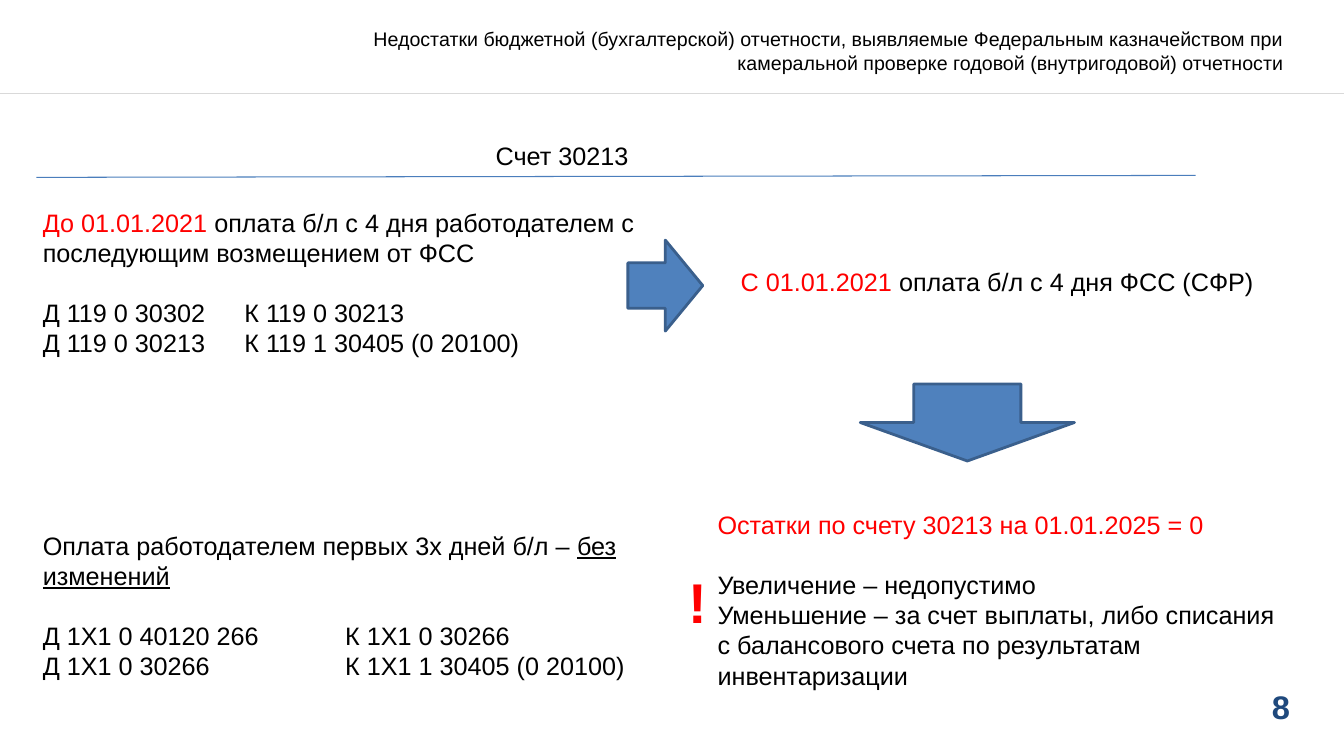
from lxml import etree
from pptx import Presentation, util as u
from pptx.dml.color import RGBColor
from pptx.enum import shapes, text
from pptx.oxml.ns import qn

Pt = u.Pt
FONT = "Arial"
BODY = 18
BLANK_LINE = 21  # gap before a new block of text
COLORS = {
    "text": "000000",
    "accent": "FF0000",
    "number": "1F497D",
    "arrow": "4F81BD",
    "arrow_edge": "3A5F8C",
    "title_rule": "4B7EBC",
    "header_rule": "D9D9D9",
}


def rgb(name):
    return RGBColor.from_string(COLORS[name])


def run(content, color="text", underline=False):
    return content, color, underline


def para(*runs, gap=0, tab=None):
    return runs, gap, tab


def add_text(s, box, paras, size=BODY, bold=False, align=text.PP_ALIGN.LEFT, inset=True):
    sp = s.shapes.add_textbox(*map(Pt, box))
    tf = sp.text_frame
    tf.word_wrap = True
    if not inset:
        tf.margin_left = tf.margin_right = tf.margin_top = tf.margin_bottom = 0
    for i, (runs, gap, tab) in enumerate(paras):
        p = tf.add_paragraph() if i else tf.paragraphs[0]
        p.alignment = align
        if gap:
            p.space_before = Pt(gap)
        if tab:
            tabs = etree.SubElement(p._p.get_or_add_pPr(), qn("a:tabLst"))
            etree.SubElement(tabs, qn("a:tab"), pos=str(Pt(tab)), algn="l")
        for content, color, underline in runs:
            r = p.add_run()
            r.text = content
            r.font.name = FONT
            r.font.size = Pt(size)
            r.font.bold = bold
            r.font.underline = underline
            r.font.color.rgb = rgb(color)


def add_rule(s, start, end, color, width):
    line = s.shapes.add_connector(shapes.MSO_CONNECTOR.STRAIGHT, *map(Pt, start + end))
    line.line.color.rgb = rgb(color)
    line.line.width = Pt(width)
    etree.SubElement(line._element.spPr, qn("a:effectLst"))


def add_arrow(s, kind, box):
    sp = s.shapes.add_shape(kind, *map(Pt, box))
    sp.shadow.inherit = False
    sp.fill.solid()
    sp.fill.fore_color.rgb = rgb("arrow")
    sp.line.color.rgb = rgb("arrow_edge")
    sp.line.width = Pt(2)


def main():
    prs = Presentation()
    prs.slide_width, prs.slide_height = Pt(960), Pt(540)
    s = prs.slides.add_slide(prs.slide_layouts[6])

    # Header, rules and page number
    add_text(s, (700.5, 490.5, 221, 28), [para(run("8", "number"))],
             size=23.3, bold=True, align=text.PP_ALIGN.RIGHT, inset=False)
    add_rule(s, (26, 126.7), (854, 125.3), "title_rule", 0.75)
    add_rule(s, (0, 67), (960, 67), "header_rule", 1)
    add_text(s, (245, 16, 679, 41), [para(run(
        "Недостатки бюджетной (бухгалтерской) отчетности, выявляемые Федеральным "
        "казначейством при камеральной проверке годовой (внутригодовой) отчетности"))],
        size=14, align=text.PP_ALIGN.RIGHT)
    add_text(s, (347, 96.5, 256, 29), [para(run("Счет 30213"))])

    # Before and after the change
    add_text(s, (23.5, 144.5, 438, 117), [
        para(run("До 01.01.2021 ", "accent"),
             run("оплата б/л с 4 дня работодателем с последующим возмещением от ФСС")),
        para(run("Д 119 0 30302\tК 119 0 30213"), gap=BLANK_LINE, tab=144),
        para(run("Д 119 0 30213\tК 119 1 30405 (0 20100)"), tab=144),
    ])
    add_text(s, (522, 186.5, 438, 51), [
        para(run("С 01.01.2021 ", "accent"), run("оплата б/л с 4 дня ФСС (СФР)")),
    ])
    add_arrow(s, shapes.MSO_SHAPE.RIGHT_ARROW, (448.5, 171.5, 53.5, 65))
    add_arrow(s, shapes.MSO_SHAPE.DOWN_ARROW, (614.5, 274.3, 153, 55))

    # Account balance
    add_text(s, (505.5, 360.5, 418, 138), [
        para(run("Остатки по счету 30213 на 01.01.2025 = 0", "accent")),
        para(run("Увеличение – недопустимо"), gap=BLANK_LINE),
        para(run("Уменьшение – за счет выплаты, либо списания с балансового счета "
                 "по результатам инвентаризации")),
    ])
    add_text(s, (484.5, 402, 37.5, 55), [para(run("!", "accent"))], size=40, bold=True)

    # First three days
    add_text(s, (23.5, 375, 438, 117), [
        para(run("Оплата работодателем первых 3х дней б/л – "),
             run("без изменений", underline=True)),
        para(run("Д 1Х1 0 40120 266\tК 1Х1 0 30266"), gap=BLANK_LINE, tab=216),
        para(run("Д 1Х1 0 30266\tК 1Х1 1 30405 (0 20100)"), tab=216),
    ])

    prs.save("out.pptx")


if __name__ == "__main__":
    main()
